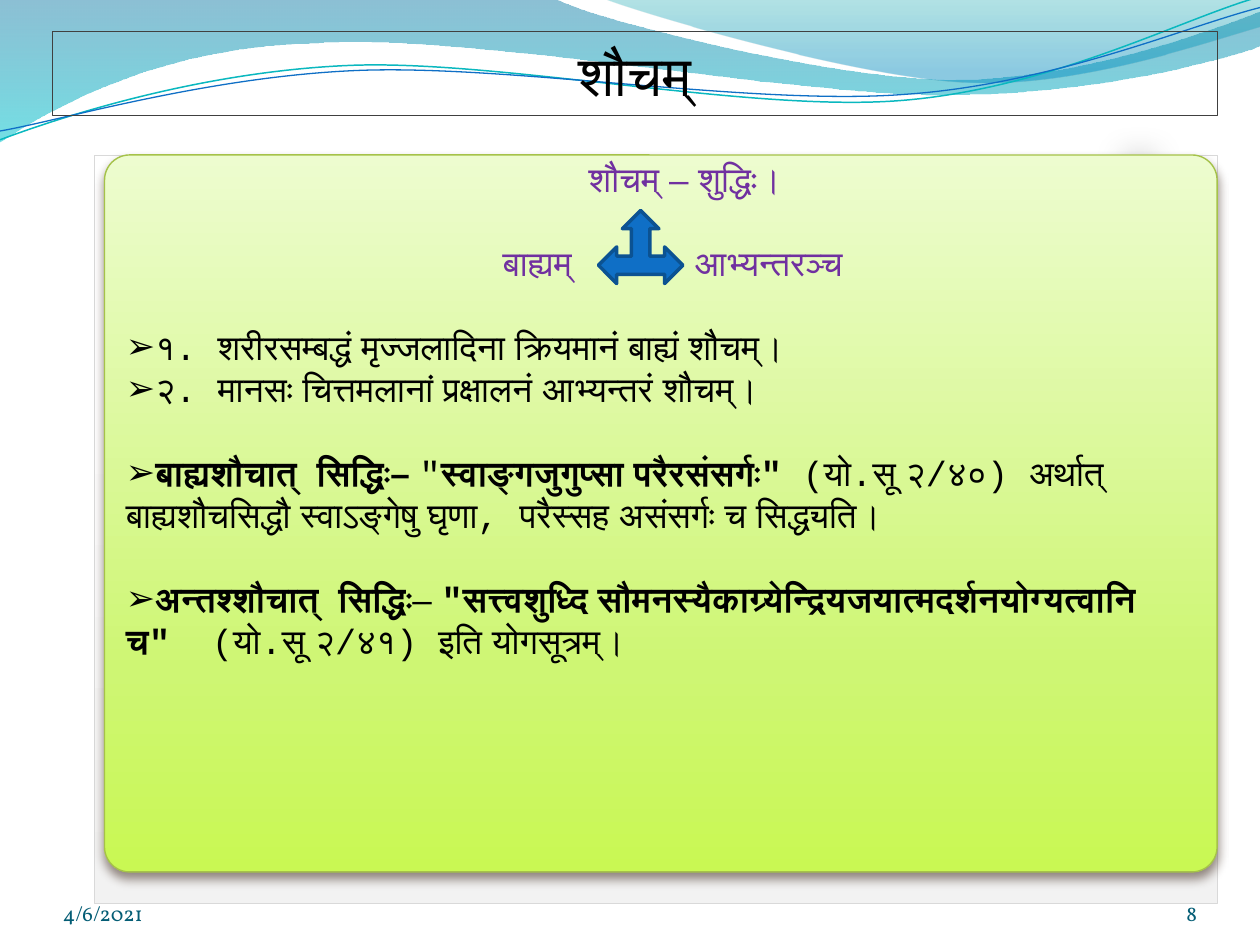
from itertools import groupby

from pptx import Presentation
from pptx.dml.color import RGBColor as Rgb
from pptx.enum.shapes import MSO_SHAPE as Shape
from pptx.enum.text import MSO_ANCHOR as Anchor, PP_ALIGN as Align
from pptx.oxml import parse_xml
from pptx.oxml.ns import qn
from pptx.util import Inches, Pt

NS = 'xmlns:a="http://schemas.openxmlformats.org/drawingml/2006/main"'
COLORS = {
    "black": "000000", "purple": "7030A0", "footer": "045D75",
    "title_line": "404040", "panel_line": "D9D9D9", "card_line": "A5C249",
    "shadow": "4E3B30", "arrow": "0F6FC6", "arrow_line": "0B5292",
    "teal": "0AB8BF", "blue": "0F6FC6",
}
GRADIENTS = {
    "left_wave": (90, [(0, "0074A1", 45), (100, "00C6CF", 55)]),
    "right_wave": (90, [(0, "00A1A9", 30), (80, "008BBF", 45)]),
    "bar": (270, [(0, "7E3700", 100), (50, "B34E00", 100), (100, "D45D00", 100)]),
    "panel": (270, [(0, "F2F2F2", 100), (67, "FFFFFF", 100)]),
    "card": (90, [(0, "EDFCCF", 100), (72, "CEF673", 100), (100, "C9F853", 100)]),
}
WAVES = [
    ("left_wave", [
        [(0, 0)], [(4.4, -0.01)],
        [(4.76, 0.17), (6.64, 0.63), (7.58, 0.63)],
        [(8.53, 0.63), (9.58, 0.26), (10, 0.09)], [(10.01, 0.36)],
        [(9.83, 0.44), (8.7, 0.76), (7.46, 0.75)],
        [(6.22, 0.75), (3.82, 0.28), (2.57, 0.34)],
        [(1.29, 0.36), (0.46, 0.83), (-0.01, 1.13)]]),
    ("right_wave", [
        [(4.79, -0.01)],
        [(5.09, 0.11), (6.82, 0.62), (7.69, 0.65)],
        [(8.56, 0.69), (9.61, 0.32), (10, 0.21)], [(10, 0)]]),
]
STRANDS = [
    ("teal", 0.85, [
        [(0, 1.11)], [(0.48, 0.93), (1.58, 0.57), (2.77, 0.52)],
        [(3.95, 0.47), (5.93, 0.89), (7.13, 0.8)],
        [(8.33, 0.71), (9.38, 0.15), (9.98, -0.02)]]),
    ("blue", 0.75, [
        [(0, 1.04)], [(0.47, 0.96), (1.64, 0.61), (2.83, 0.56)],
        [(4.03, 0.51), (5.97, 0.84), (7.17, 0.75)],
        [(8.36, 0.67), (9.41, 0.21), (10, 0.06)]]),
]
MARKS = './,()"'
ARROW_GAP = 64.5
BODY = [
    ("heading", 0, [("शौचम् – शुद्धिः।", False, 0)]),
    ("branches", 24, [("बाह्यम्", False, 0), (" ", False, ARROW_GAP),
                      ("आभ्यन्तरञ्च", False, 0)]),
    ("bullet", 24, [("१. शरीरसम्बद्धं मृज्जलादिना क्रियमानं बाह्यं शौचम्।", False, 0)]),
    ("bullet", 0, [("२. मानसः चित्तमलानां प्रक्षालनं आभ्यन्तरं शौचम्।", False, 0)]),
    ("bullet", 24, [
        ("बाह्यशौचात्  सिद्धिः– ", True, 0), ('"', False, 0),
        ('स्वाङ्गजुगुप्सा परैरसंसर्गः" ', True, 0),
        ("(यो.सू २/४०) अर्थात् बाह्यशौचसिद्धौ स्वाऽङ्गेषु घृणा, "
         "परैस्सह असंसर्गः च सिद्ध्यति।", False, 0)]),
    ("bullet", 24, [
        ("अन्तश्शौचात्  सिद्धिः", True, 0), ("– ", False, 0),
        ('"सत्त्वशुध्दि सौमनस्यैकाग्र्येन्द्रियजयात्मदर्शनयोग्यत्वानि च"  ', True, 0),
        ("(यो.सू २/४१) इति योगसूत्रम्।", False, 0)]),
]
STYLES = {
    "heading": ("purple", Align.CENTER, 0.54, 0),
    "branches": ("purple", Align.CENTER, 0.35, 0),
    "bullet": ("black", Align.LEFT, 0, 0.1),
}
FOOTERS = [("4/6/2021", 0.5, 2.33, Align.LEFT), ("8", 8.67, 0.83, Align.RIGHT)]


def color(name):
    return Rgb.from_string(COLORS[name])


def outline(shape, name, width):
    shape.line.color.rgb = color(name)
    shape.line.width = Pt(width)


def fill_gradient(shape, name):
    angle, stops = GRADIENTS[name]
    marks = "".join(
        f'<a:gs pos="{at * 1000}"><a:srgbClr val="{tone}">'
        f'<a:alpha val="{alpha * 1000}"/></a:srgbClr></a:gs>'
        for at, tone, alpha in stops)
    shape.fill.gradient()
    old = shape.element.spPr.find(qn("a:gradFill"))
    old.getparent().replace(old, parse_xml(
        f'<a:gradFill {NS} rotWithShape="1"><a:gsLst>{marks}</a:gsLst>'
        f'<a:lin ang="{angle * 60000}" scaled="0"/></a:gradFill>'))


def add_shadow(shape, tone, alpha, blur, distance, angle):
    shape.element.spPr.find(qn("a:effectLst")).append(parse_xml(
        f'<a:outerShdw {NS} blurRad="{Pt(blur)}" dist="{Pt(distance)}" '
        f'dir="{angle * 60000}" rotWithShape="0"><a:srgbClr val="{COLORS[tone]}">'
        f'<a:alpha val="{alpha * 1000}"/></a:srgbClr></a:outerShdw>'))


def add_curve(page, segments, close):
    points = [(Inches(x), Inches(y)) for segment in segments for x, y in segment]
    builder = page.shapes.build_freeform(*points[0])
    builder.add_line_segments(points[1:], close=close)
    shape = builder.convert_to_shape()
    shape.shadow.inherit = False
    lines = iter(list(shape.element.spPr.iter(qn("a:lnTo"))))
    for segment in segments[1:]:
        legs = [next(lines) for _ in segment]
        if len(legs) == 3:
            cubic = parse_xml(f"<a:cubicBezTo {NS}/>")
            legs[0].addprevious(cubic)
            for leg in legs:
                cubic.append(leg[0])
                leg.getparent().remove(leg)
    return shape


def add_preset(page, kind, *place):
    shape = page.shapes.add_shape(kind, *map(Inches, place))
    shape.shadow.inherit = False
    return shape


def add_text_box(page, *place, anchor=Anchor.TOP):
    frame = page.shapes.add_textbox(*map(Inches, place)).text_frame
    layout = dict(word_wrap=True, vertical_anchor=anchor, margin_left=0,
                  margin_right=0, margin_top=0, margin_bottom=0)
    for key, value in layout.items():
        setattr(frame, key, value)
    return frame


def add_span(para, text, size, face, tone, bold=False, spread=0, script="Arial"):
    span = para.add_run()
    span.text = text
    for key, value in dict(size=Pt(size), name=face, bold=bold).items():
        setattr(span.font, key, value)
    span.font.color.rgb = color(tone)
    span.font._element.append(parse_xml(f'<a:cs {NS} typeface="{script}"/>'))
    if spread:
        span.font._element.set("spc", str(int(spread * 100)))


def split_marks(text):
    def is_mark(index):
        return text[:index + 1].rstrip(" ")[-1:] in tuple(MARKS)

    for mark, indexes in groupby(range(len(text)), is_mark):
        yield "".join(text[i] for i in indexes), "Courier New" if mark else "Arial"


def fill_body(frame):
    for index, (style, gap, spans) in enumerate(BODY):
        para = frame.add_paragraph() if index else frame.paragraphs[0]
        tone, para.alignment, left, right = STYLES[style]
        para.line_spacing = Pt(24)
        para.space_before = Pt(gap)
        props = para._p.get_or_add_pPr()
        for key, value in dict(marL=left, marR=right, indent=0).items():
            props.set(key, str(Inches(value)))
        if style == "bullet":
            props.append(parse_xml(f'<a:buFont {NS} typeface="Arial"/>'))
            props.append(parse_xml(f'<a:buChar {NS} char="➢"/>'))
        for text, bold, spread in spans:
            for part, script in split_marks(text):
                add_span(para, part, 20, "Courier New", tone, bold, spread, script)


def main():
    deck = Presentation()
    deck.slide_width, deck.slide_height = Inches(10), Inches(7.5)
    page = deck.slides.add_slide(deck.slide_layouts[6])

    for name, segments in WAVES:
        wave = add_curve(page, segments, True)
        fill_gradient(wave, name)
        wave.line.fill.background()
    for tone, width, segments in STRANDS:
        strand = add_curve(page, segments, False)
        strand.fill.background()
        outline(strand, tone, width)

    bar = add_preset(page, Shape.RECTANGLE, 8.88, 1.23, 0.23, 5.36)
    fill_gradient(bar, "bar")
    bar.line.fill.background()
    add_shadow(bar, "black", 22, 18, 3, 0)

    panel = add_preset(page, Shape.RECTANGLE, 0.75, 1.23, 8.91, 5.94)
    fill_gradient(panel, "panel")
    outline(panel, "panel_line", 0.25)

    card = add_preset(page, Shape.ROUNDED_RECTANGLE, 0.83, 1.23, 8.83, 5.69)
    card.adjustments[0] = 0.035
    fill_gradient(card, "card")
    outline(card, "card_line", 0.79)
    add_shadow(card, "shadow", 60, 6, 4, 90)

    fill_body(add_text_box(page, 1, 1.25, 8.33, 5.67))

    title = add_preset(page, Shape.RECTANGLE, 0.42, 0.25, 9.24, 0.67)
    title.fill.background()
    outline(title, "title_line", 0.5)
    title.text_frame.vertical_anchor = Anchor.MIDDLE
    para = title.text_frame.paragraphs[0]
    para.alignment = Align.CENTER
    add_span(para, "शौचम्", 32, "Arial", "black")

    for text, left, width, align in FOOTERS:
        para = add_text_box(page, left, 6.95, width, 0.4, anchor=Anchor.BOTTOM).paragraphs[0]
        para.alignment = align
        add_span(para, text, 12, "Vollkorn", "footer")

    arrow = add_preset(page, Shape.LEFT_RIGHT_UP_ARROW, 4.75, 1.67, 0.67, 0.58)
    arrow.fill.solid()
    arrow.fill.fore_color.rgb = color("arrow")
    outline(arrow, "arrow_line", 2)

    deck.save("out.pptx")


if __name__ == "__main__":
    main()
